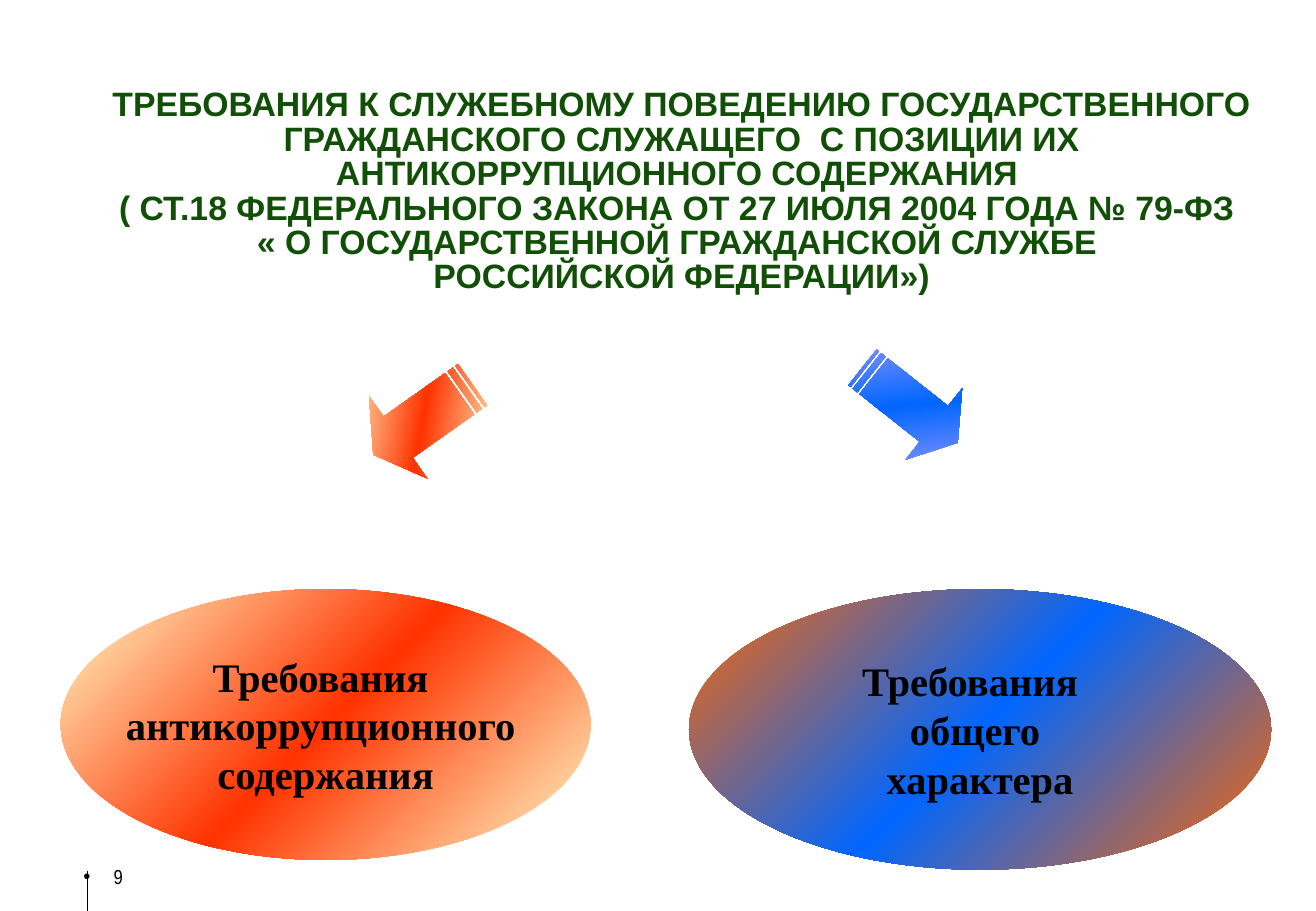
from copy import deepcopy
from dataclasses import dataclass

from lxml import etree
from pptx import Presentation
from pptx.dml.color import RGBColor
from pptx.enum.shapes import MSO_CONNECTOR, MSO_SHAPE
from pptx.enum.text import MSO_ANCHOR, MSO_AUTO_SIZE, PP_ALIGN
from pptx.oxml.ns import qn
from pptx.util import Inches, Pt

STRAIGHT = MSO_CONNECTOR.STRAIGHT
ELLIPSE = MSO_SHAPE.OVAL
STRIPED_ARROW = MSO_SHAPE.STRIPED_RIGHT_ARROW
MIDDLE, TOP = MSO_ANCHOR.MIDDLE, MSO_ANCHOR.TOP
CENTER, RIGHT = PP_ALIGN.CENTER, PP_ALIGN.RIGHT
NO_FIT = MSO_AUTO_SIZE.NONE


@dataclass(frozen=True)
class Theme:
    """Colours and text formats of the slide."""
    black: RGBColor = RGBColor(0, 0, 0)
    green: RGBColor = RGBColor.from_string("104F05")
    red_glow: tuple = ("FFFFCC", "FF3300", "FFFFCC")
    blue_orange: tuple = ("FF6600", "0066FF", "FF6600")
    blue_glow: tuple = ("9999FF", "0066FF", "9999FF")
    title: tuple = ("Arial", 20, True)
    label: tuple = ("Times New Roman", 24, True)
    number: tuple = ("Arial Narrow", 12, False)


THEME = Theme()

TITLE = (
    "ТРЕБОВАНИЯ К СЛУЖЕБНОМУ ПОВЕДЕНИЮ ГОСУДАРСТВЕННОГО ГРАЖДАНСКОГО "
    "СЛУЖАЩЕГО  С ПОЗИЦИИ ИХ АНТИКОРРУПЦИОННОГО СОДЕРЖАНИЯ \v"
    "( СТ.18 ФЕДЕРАЛЬНОГО ЗАКОНА ОТ 27 ИЮЛЯ 2004 ГОДА № 79-ФЗ \v"
    "« О ГОСУДАРСТВЕННОЙ ГРАЖДАНСКОЙ СЛУЖБЕ \v"
    "РОССИЙСКОЙ ФЕДЕРАЦИИ»)"
)

ARROWS = (
    ((2.98, 3.04, 1, 0.83), 144.8, THEME.red_glow),
    ((6.99, 2.96, 1, 0.75), 38.4, THEME.blue_glow),
)

REQUIREMENTS = (
    ((0.5, 4.85, 4.36, 2.23), THEME.red_glow,
     "Требования \nантикоррупционного \nсодержания"),
    ((5.67, 4.85, 4.79, 2.31), THEME.blue_orange,
     "Требования  \nобщего \nхарактера"),
)


def set_values(target, values):
    """Set attributes of a target from a dict."""
    for name, value in values.items():
        setattr(target, name, value)


def place(shape, box):
    """Move and size a shape to a box in inches."""
    names = ("left", "top", "width", "height")
    set_values(shape, dict(zip(names, map(Inches, box))))


def format_text(frame, style, color, alignment, **paragraph_values):
    """Apply one text style to every paragraph of a frame."""
    name, size, bold = style
    for paragraph in frame.paragraphs:
        set_values(paragraph, {"alignment": alignment, **paragraph_values})
        set_values(paragraph.font, {"name": name, "size": Pt(size), "bold": bold})
        paragraph.font.color.rgb = color


def add_gradient_shape(slide, kind, box, colors):
    """Add a borderless shape with a diagonal three-colour gradient."""
    shape = slide.shapes.add_shape(kind, *map(Inches, box))
    shape.shadow.inherit = False
    shape.line.fill.background()
    shape.fill.gradient()
    shape.fill.gradient_angle = 315
    stop_list = next(shape._element.spPr.iter(qn("a:gsLst")))
    stop_list.append(deepcopy(stop_list[0]))
    for index, (stop, color) in enumerate(zip(shape.fill.gradient_stops, colors)):
        stop.position = index / 2
        stop.color.rgb = RGBColor.from_string(color)
    return shape


def add_title(slide, box):
    """Fill and format the title placeholder."""
    title = slide.shapes.title
    place(title, box)
    title.text_frame.text = TITLE
    set_values(title.text_frame, {
        "word_wrap": True, "auto_size": NO_FIT, "vertical_anchor": MIDDLE})
    format_text(title.text_frame, THEME.title, THEME.green, CENTER, line_spacing=0.85)


def add_arrow(slide, box, rotation, colors):
    """Add a striped arrow whose head takes a quarter of its length."""
    arrow = add_gradient_shape(slide, STRIPED_ARROW, box, colors)
    arrow.rotation = rotation
    width, height = box[2:]
    arrow.adjustments[0] = 0.5
    arrow.adjustments[1] = 0.25 * width / height


def add_requirement(slide, box, colors, text):
    """Add an ellipse with a centred label."""
    ellipse = add_gradient_shape(slide, ELLIPSE, box, colors)
    frame = ellipse.text_frame
    frame.text = text
    set_values(frame, {"word_wrap": False, "vertical_anchor": MIDDLE})
    format_text(frame, THEME.label, THEME.black, CENTER)


def add_page_number(slide, box):
    """Add the bulleted page number and the rule that runs to the slide edge."""
    left, top, width, height = box
    rule = slide.shapes.add_connector(
        STRAIGHT, Inches(0.72), Inches(top + 0.1), Inches(0.72), Inches(top + height))
    rule.line.color.rgb = THEME.black
    rule.line.width = Pt(0.75)
    etree.SubElement(rule._element.spPr, qn("a:effectLst"))
    number = slide.shapes.add_textbox(*map(Inches, box))
    frame = number.text_frame
    frame.text = "9"
    set_values(frame, {"word_wrap": True, "vertical_anchor": TOP})
    properties = frame.paragraphs[0]._p.get_or_add_pPr()
    properties.set("marL", str(Inches(0.25)))
    properties.set("indent", str(-Inches(0.25)))
    etree.SubElement(properties, qn("a:buFont"), typeface="Arial")
    etree.SubElement(properties, qn("a:buChar"), char="•")
    format_text(frame, THEME.number, THEME.black, RIGHT)


def main():
    """Build and save the slide."""
    presentation = Presentation()
    presentation.slide_width = Inches(10.83)
    presentation.slide_height = Inches(7.5)
    slide = presentation.slides.add_slide(presentation.slide_layouts[5])
    add_page_number(slide, (0, 7.07, 1.11, 0.43))
    add_title(slide, (0.61, 0.52, 10, 2.13))
    for requirement in REQUIREMENTS:
        add_requirement(slide, *requirement)
    for arrow in ARROWS:
        add_arrow(slide, *arrow)
    presentation.save("out.pptx")


if __name__ == "__main__":
    main()
